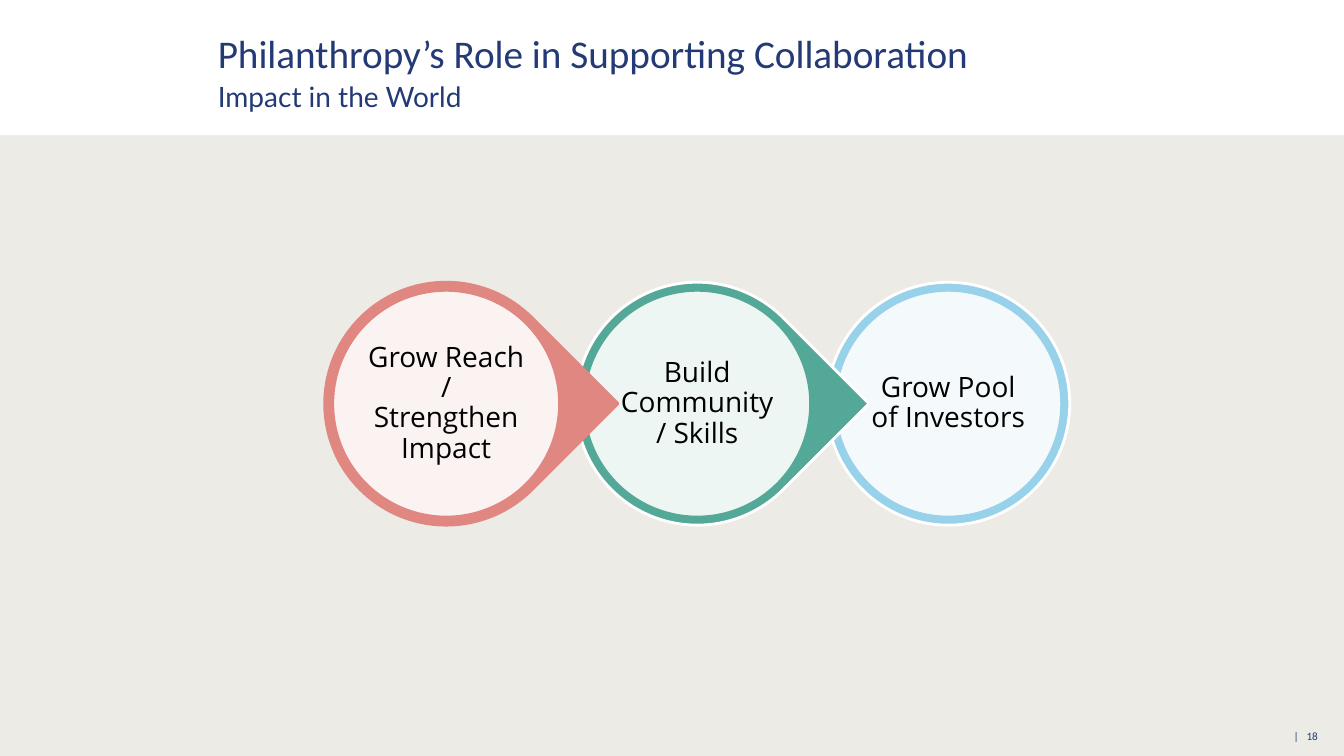
"""Build a slide showing three linked stages of philanthropic impact."""
from dataclasses import dataclass

from lxml import etree
from pptx import Presentation
from pptx import util as u
from pptx.dml import color
from pptx.enum import shapes, text
from pptx.oxml import ns

COLORS = {
    "navy": "233A76",
    "white": "FFFFFF",
    "black": "000000",
    "sand": "EDEBE6",
    "coral": "DF8780",
    "green": "54A898",
    "sky": "98D2EA",
}
STAGE_LEFT, STAGE_TOP, STAGE_PITCH = 3.22, 2.8, 2.49
OUTER_SIZE, INNER_INSET, LABEL_INSET = 2.41, 0.08, 0.4


@dataclass(frozen=True)
class Stage:
    label: str
    tint: str
    rim: str
    outline: shapes.MSO_SHAPE
    rotation: int


@dataclass(frozen=True)
class Caption:
    wording: str
    left: float
    top: float
    width: float
    height: float
    size: int
    font: str = "Calibri"
    ink: str = "navy"
    inset: float = 0
    anchor: text.MSO_ANCHOR = text.MSO_ANCHOR.TOP
    align: text.PP_ALIGN = text.PP_ALIGN.LEFT
    line_spacing: float = 1.0


STAGES = [
    Stage("Grow Reach / Strengthen Impact", "coral", "coral", shapes.MSO_SHAPE.TEAR, 45),
    Stage("Build Community / Skills", "green", "white", shapes.MSO_SHAPE.TEAR, 45),
    Stage("Grow Pool of Investors", "sky", "white", shapes.MSO_SHAPE.OVAL, 0),
]
HEADINGS = [
    Caption("Philanthropy’s Role in Supporting Collaboration", 2.16, 0.26, 8.32, 0.5, 28,
            anchor=text.MSO_ANCHOR.BOTTOM),
    Caption("Impact in the World", 2.16, 0.79, 9.01, 0.34, 20, font="Lato"),
]
PAGE_NUMBER = Caption("| ", 12.36, 7.12, 0.81, 0.36, 8, inset=0.1,
                      anchor=text.MSO_ANCHOR.MIDDLE, align=text.PP_ALIGN.RIGHT)


def rgb(name: str) -> color.RGBColor:
    return color.RGBColor.from_string(COLORS[name])


def add_outline(slide, kind, left: float, top: float, width: float, height: float,
                fill: str, rim: str | None = None):
    outline = slide.shapes.add_shape(
        kind, u.Inches(left), u.Inches(top), u.Inches(width), u.Inches(height))
    outline.shadow.inherit = False
    outline.fill.solid()
    outline.fill.fore_color.rgb = rgb(fill)
    if rim:
        outline.line.color.rgb = rgb(rim)
        outline.line.width = u.Pt(2)
    else:
        outline.line.fill.background()
    return outline


def add_caption(slide, caption: Caption):
    box = slide.shapes.add_textbox(u.Inches(caption.left), u.Inches(caption.top),
                                   u.Inches(caption.width), u.Inches(caption.height))
    frame = box.text_frame
    frame.text = caption.wording
    frame.word_wrap = True
    frame.vertical_anchor = caption.anchor
    frame.margin_left = frame.margin_right = u.Inches(caption.inset)
    frame.margin_top = frame.margin_bottom = u.Inches(min(caption.inset, 0.05))
    paragraph = frame.paragraphs[0]
    paragraph.alignment = caption.align
    paragraph.line_spacing = caption.line_spacing
    paragraph.font.name = caption.font
    paragraph.font.size = u.Pt(caption.size)
    paragraph.font.color.rgb = rgb(caption.ink)
    for run in paragraph.runs:
        style_run(run, caption)
    return paragraph


def style_run(run, caption: Caption) -> None:
    run.font.name = caption.font
    run.font.size = u.Pt(caption.size)
    run.font.color.rgb = rgb(caption.ink)


def add_stage(slide, position: int, stage: Stage) -> None:
    left = STAGE_LEFT + position * STAGE_PITCH
    outer = add_outline(slide, stage.outline, left, STAGE_TOP, OUTER_SIZE, OUTER_SIZE,
                        stage.tint, stage.rim)
    outer.rotation = stage.rotation
    inner_size = OUTER_SIZE - 2 * INNER_INSET
    inner = add_outline(slide, shapes.MSO_SHAPE.OVAL, left + INNER_INSET,
                        STAGE_TOP + INNER_INSET, inner_size, inner_size,
                        "white", stage.tint)
    tone = inner.fill._xPr.find(ns.qn("a:solidFill"))[0]
    etree.SubElement(tone, ns.qn("a:alpha"), val="90000")
    label_size = OUTER_SIZE - 2 * LABEL_INSET
    add_caption(slide, Caption(
        stage.label, left + LABEL_INSET, STAGE_TOP + LABEL_INSET, label_size, label_size, 20,
        font="Open Sans", ink="black", inset=0.03, anchor=text.MSO_ANCHOR.MIDDLE,
        align=text.PP_ALIGN.CENTER, line_spacing=0.9))


def add_page_number(slide, number: int) -> None:
    paragraph = add_caption(slide, PAGE_NUMBER)
    paragraph.runs[0].font._element.set("spc", "180")
    digits = paragraph.add_run()
    digits.text = str(number)
    style_run(digits, PAGE_NUMBER)


def main() -> None:
    deck = Presentation()
    deck.slide_width, deck.slide_height = u.Inches(13.33), u.Inches(7.5)
    slide = deck.slides.add_slide(deck.slide_layouts[6])
    slide.background.fill.solid()
    slide.background.fill.fore_color.rgb = rgb("sand")
    add_outline(slide, shapes.MSO_SHAPE.RECTANGLE, 0, 0, 13.33, 1.34, "white")
    add_page_number(slide, 18)
    for position, stage in reversed(list(enumerate(STAGES))):
        add_stage(slide, position, stage)
    for heading in HEADINGS:
        add_caption(slide, heading)
    deck.save("out.pptx")


if __name__ == "__main__":
    main()
